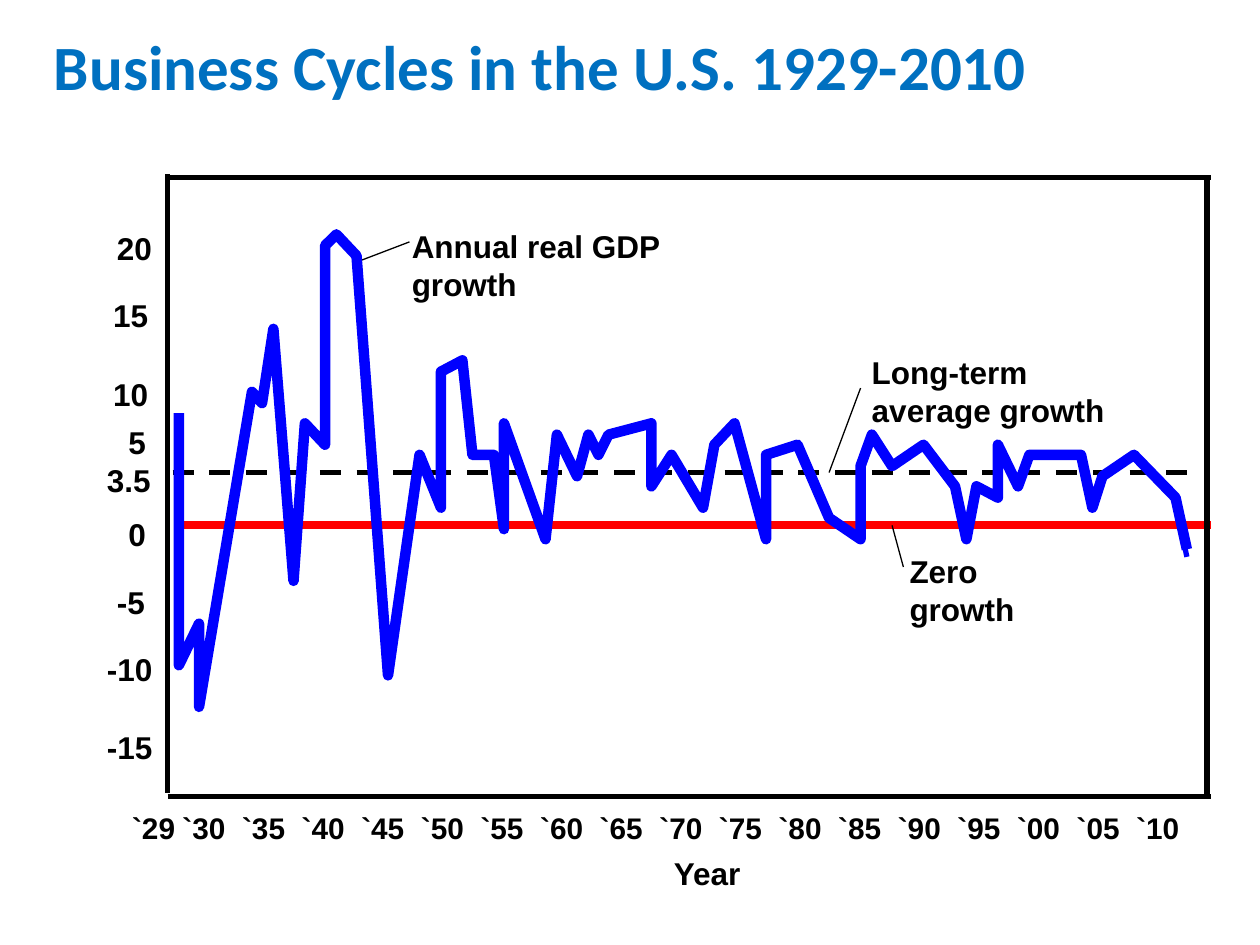
from lxml.etree import SubElement
from pptx import Presentation
from pptx.dml.color import RGBColor
from pptx.enum.dml import MSO_LINE
from pptx.enum.shapes import MSO_CONNECTOR as CONN
from pptx.enum.text import MSO_AUTO_SIZE as AUTO
from pptx.oxml.ns import qn
from pptx.util import Inches, Pt

WHITE = RGBColor(0xFF, 0xFF, 0xFF)
BLACK = RGBColor(0, 0, 0)
RED = RGBColor(0xFF, 0, 0)
BLUE = RGBColor(0, 0, 0xFF)
TITLE_BLUE = RGBColor(0, 0x70, 0xC0)

TITLE_FONT = {"name": "Calibri", "size": Pt(36), "bold": True}
LABEL_FONT = {"name": "Arial", "size": Pt(18), "bold": True}
YEAR_FONT = {"name": "Arial", "size": Pt(17), "bold": True}

YEARS = ["`29", "`30", "`35", "`40", "`45", "`50", "`55", "`60", "`65",
         "`70", "`75", "`80", "`85", "`90", "`95", "`00", "`05", "`10"]
FIRST_TAB, LAST_TAB = 0.4, 7.97

GROWTH_LABELS = [
    ("20", 0.83, 1.77, 0.58), ("15", 0.8, 2.3, 0.61), ("10", 0.8, 2.93, 0.58),
    ("5", 0.92, 3.31, 0.42), ("3.5", 0.75, 3.61, 0.58), ("0", 0.92, 4.04, 0.42),
    ("-5", 0.83, 4.58, 0.58), ("-10", 0.75, 5.11, 0.67), ("-15", 0.75, 5.73, 0.58),
]

CALLOUTS = [
    ("Annual real GDP growth", (3.17, 1.75, 2.17), (3.25, 1.92, 2.83, 2.08)),
    ("Long-term average growth", (6.82, 2.75, 2.08), (6.83, 3.08, 6.58, 3.75)),
    ("Zero growth", (7.12, 4.33, 1.08), (7.17, 4.5, 7.08, 4.17)),
]

FRAME = [
    (1.34, 1.41, 9.61, 1.41), (1.33, 6.32, 9.61, 6.32),
    (1.33, 1.38, 1.33, 6.29), (9.58, 1.41, 9.58, 6.32),
]

GDP_POINTS = [
    (1.42, 3.28), (1.42, 5.28), (1.58, 4.95), (1.58, 5.61), (2, 3.11),
    (2.08, 3.2), (2.17, 2.61), (2.33, 4.61), (2.42, 3.36), (2.58, 3.53),
    (2.58, 1.95), (2.67, 1.86), (2.83, 2.03), (3.08, 5.36), (3.33, 3.61),
    (3.5, 4.03), (3.5, 2.95), (3.67, 2.86), (3.75, 3.61), (3.92, 3.61),
    (4, 4.2), (4, 3.36), (4.33, 4.28), (4.42, 3.45), (4.58, 3.78),
    (4.67, 3.45), (4.75, 3.61), (4.83, 3.45), (5.17, 3.36), (5.17, 3.86),
    (5.33, 3.61), (5.58, 4.03), (5.67, 3.53), (5.83, 3.36), (6.08, 4.28),
    (6.08, 3.61), (6.33, 3.53), (6.58, 4.11), (6.83, 4.28), (6.83, 3.7),
    (6.92, 3.45), (7.08, 3.7), (7.33, 3.53), (7.58, 3.86), (7.67, 4.28),
    (7.75, 3.86), (7.92, 3.95), (7.92, 3.53), (8.08, 3.86), (8.17, 3.61),
    (8.58, 3.61), (8.67, 4.03), (8.75, 3.78), (9, 3.61), (9.33, 3.95),
    (9.42, 4.36),
]


def add_text(slide, text, left, top, width, height=0.37, font=LABEL_FONT, color=BLACK):
    sp = slide.shapes.add_textbox(*map(Inches, (left, top, width, height)))
    tf = sp.text_frame
    tf.word_wrap = True
    tf.auto_size = AUTO.SHAPE_TO_FIT_TEXT
    r = tf.paragraphs[0].add_run()
    r.text = text
    for key, value in font.items():
        setattr(r.font, key, value)
    r.font.color.rgb = color
    return sp


def add_line(slide, ends, color, width, dash=None):
    line = slide.shapes.add_connector(CONN.STRAIGHT, *map(Inches, ends))
    line.line.color.rgb = color
    line.line.width = Pt(width)
    if dash:
        line.line.dash_style = dash
    SubElement(line._element.spPr, qn("a:effectLst"))


def add_curve(slide, points, color, width):
    start, *rest = [(Inches(x), Inches(y)) for x, y in points]
    builder = slide.shapes.build_freeform(*start)
    builder.add_line_segments(rest, close=False)
    sp = builder.convert_to_shape()
    sp.shadow.inherit = False
    sp.fill.background()
    sp.line.color.rgb = color
    sp.line.width = Pt(width)
    SubElement(sp.line._ln, qn("a:round"))


def add_year_axis(slide):
    sp = add_text(slide, "\t".join(YEARS), 0.95, 6.38, 8.97, 0.36, YEAR_FONT)
    pPr = sp.text_frame.paragraphs[0]._p.get_or_add_pPr()
    tabs = SubElement(pPr, qn("a:tabLst"))
    count = len(YEARS) - 1
    step = (LAST_TAB - FIRST_TAB) / (count - 1)
    for i in range(count):
        SubElement(tabs, qn("a:tab"), pos=str(Inches(FIRST_TAB + i * step)), algn="l")
    add_text(slide, "Year", 5.25, 6.73, 0.75)


def main():
    prs = Presentation()
    prs.slide_width, prs.slide_height = Inches(10), Inches(7.5)
    slide = prs.slides.add_slide(prs.slide_layouts[6])

    title = add_text(slide, "Business Cycles in the U.S. 1929-2010",
                     0.33, 0.17, 9.38, 0.65, TITLE_FONT, TITLE_BLUE)
    title.fill.solid()
    title.fill.fore_color.rgb = WHITE

    add_line(slide, (1.44, 4.17, 9.61, 4.17), RED, 4.5)
    add_line(slide, (1.37, 3.75, 9.53, 3.75), BLACK, 3, MSO_LINE.DASH)
    add_year_axis(slide)
    for label in GROWTH_LABELS:
        add_text(slide, *label)
    add_line(slide, (9.33, 4, 9.42, 4.42), BLUE, 3)
    for text, box, leader in CALLOUTS:
        add_text(slide, text, *box, height=0.65)
        add_line(slide, leader, BLACK, 0.75)
    add_curve(slide, GDP_POINTS, BLUE, 6)
    for ends in FRAME:
        add_line(slide, ends, BLACK, 3)

    prs.save("out.pptx")


if __name__ == "__main__":
    main()
